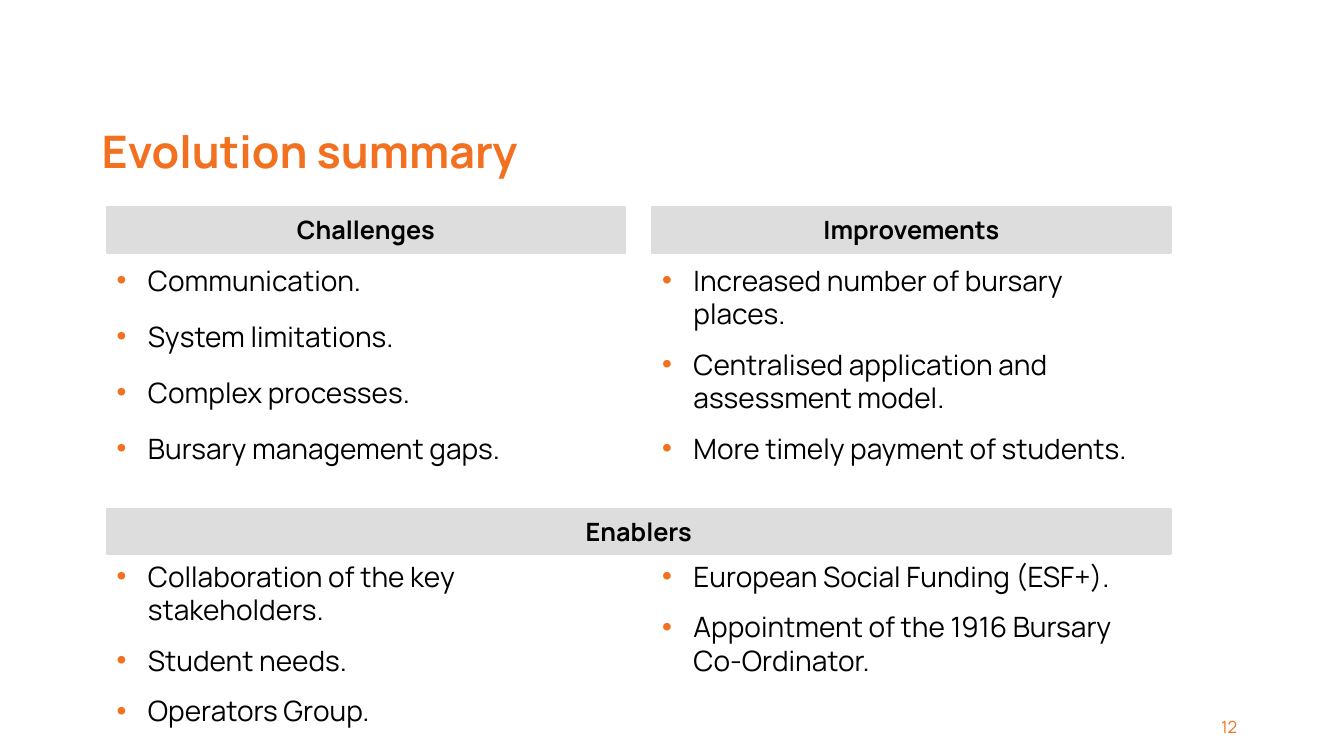
from lxml import etree
from pptx import Presentation
from pptx.dml.color import RGBColor
from pptx.enum.shapes import MSO_SHAPE
from pptx.enum.text import MSO_ANCHOR as Anchor, PP_ALIGN as Align
from pptx.oxml.ns import qn
from pptx.util import Inches, Pt

# Content: (column, top, height, space before, points)
TITLE = "Evolution summary"
PAGE_NUMBER = "12"
LISTS = [
    (0, 2.56, 2.12, 10, ["Communication.", "System limitations.",
                         "Complex processes.", "Bursary management gaps."]),
    (1, 2.56, 2.12, 6, ["Increased number of bursary places.",
                        "Centralised application and assessment model.",
                        "More timely payment of students."]),
    (0, 5.5, 1.78, 6, ["Collaboration of the key stakeholders.",
                       "Student needs.", "Operators Group."]),
    (1, 5.5, 1.28, 6, ["European Social Funding (ESF+).",
                       "Appointment of the 1916 Bursary\nCo-Ordinator."]),
]

# Style and grid
FONT = "Manrope"
ORANGE = RGBColor(0xF2, 0x71, 0x21)
GREY = RGBColor(0xDD, 0xDD, 0xDD)
BLACK = RGBColor(0, 0, 0)
COLUMN_WIDTH, GAP = 5.14, 0.27
COLUMNS = [1.06, 1.06 + COLUMN_WIDTH + GAP]
FULL_WIDTH = 2 * COLUMN_WIDTH + GAP
HEADINGS = [
    ("Challenges", COLUMNS[0], 2.05, COLUMN_WIDTH, 0.46),
    ("Improvements", COLUMNS[1], 2.05, COLUMN_WIDTH, 0.46),
    ("Enablers", COLUMNS[0], 5.05, FULL_WIDTH, 0.45),
]


def add_bullet(paragraph):
    props = paragraph._p.get_or_add_pPr()
    props.set("marL", str(Inches(0.31)))
    props.set("indent", str(-Inches(0.31)))
    color = etree.SubElement(props, qn("a:buClr"))
    etree.SubElement(color, qn("a:srgbClr"), val=str(ORANGE))
    etree.SubElement(props, qn("a:buFont"), typeface="Arial")
    etree.SubElement(props, qn("a:buChar"), char="•")


def write(shape, lines, size=20, color=BLACK, bold=False, align=Align.LEFT,
          anchor=Anchor.MIDDLE, bullets=False, before=0, after=0, spacing=None):
    frame = shape.text_frame
    frame.word_wrap = True
    frame.vertical_anchor = anchor
    for i, line in enumerate(lines):
        paragraph = frame.add_paragraph() if i else frame.paragraphs[0]
        paragraph.text = line
        if bullets:
            add_bullet(paragraph)
        paragraph.alignment = align
        paragraph.space_before = Pt(before if i else 0)
        paragraph.space_after = Pt(after)
        paragraph.line_spacing = spacing
        for run in paragraph.runs:
            run.font.name = FONT
            run.font.size = Pt(size)
            run.font.bold = bold
            run.font.color.rgb = color


def main():
    prs = Presentation()
    prs.slide_width, prs.slide_height = Inches(13.33), Inches(7.5)
    slide = prs.slides.add_slide(prs.slide_layouts[6])
    shapes = slide.shapes

    # Title
    title = shapes.add_textbox(*map(Inches, (0.91, 1.06, 11.5, 0.93)))
    write(title, [TITLE], size=32, color=ORANGE, bold=True, spacing=0.9)

    # Heading bars
    for heading, *place in HEADINGS:
        bar = shapes.add_shape(MSO_SHAPE.RECTANGLE, *map(Inches, place))
        bar.shadow.inherit = False
        bar.fill.solid()
        bar.fill.fore_color.rgb = GREY
        bar.line.color.rgb = GREY
        bar.line.width = Pt(1.5)
        write(bar, [heading], size=18, bold=True, align=Align.CENTER)

    # Bulleted lists
    for column, top, height, before, points in LISTS:
        place = (COLUMNS[column], top, COLUMN_WIDTH, height)
        box = shapes.add_textbox(*map(Inches, place))
        write(box, points, anchor=Anchor.TOP, bullets=True,
              before=before, after=6)

    # Page number
    number = shapes.add_textbox(*map(Inches, (9.37, 7.01, 3, 0.4)))
    write(number, [PAGE_NUMBER], size=12, color=ORANGE, align=Align.RIGHT)

    prs.save("out.pptx")


if __name__ == "__main__":
    main()
